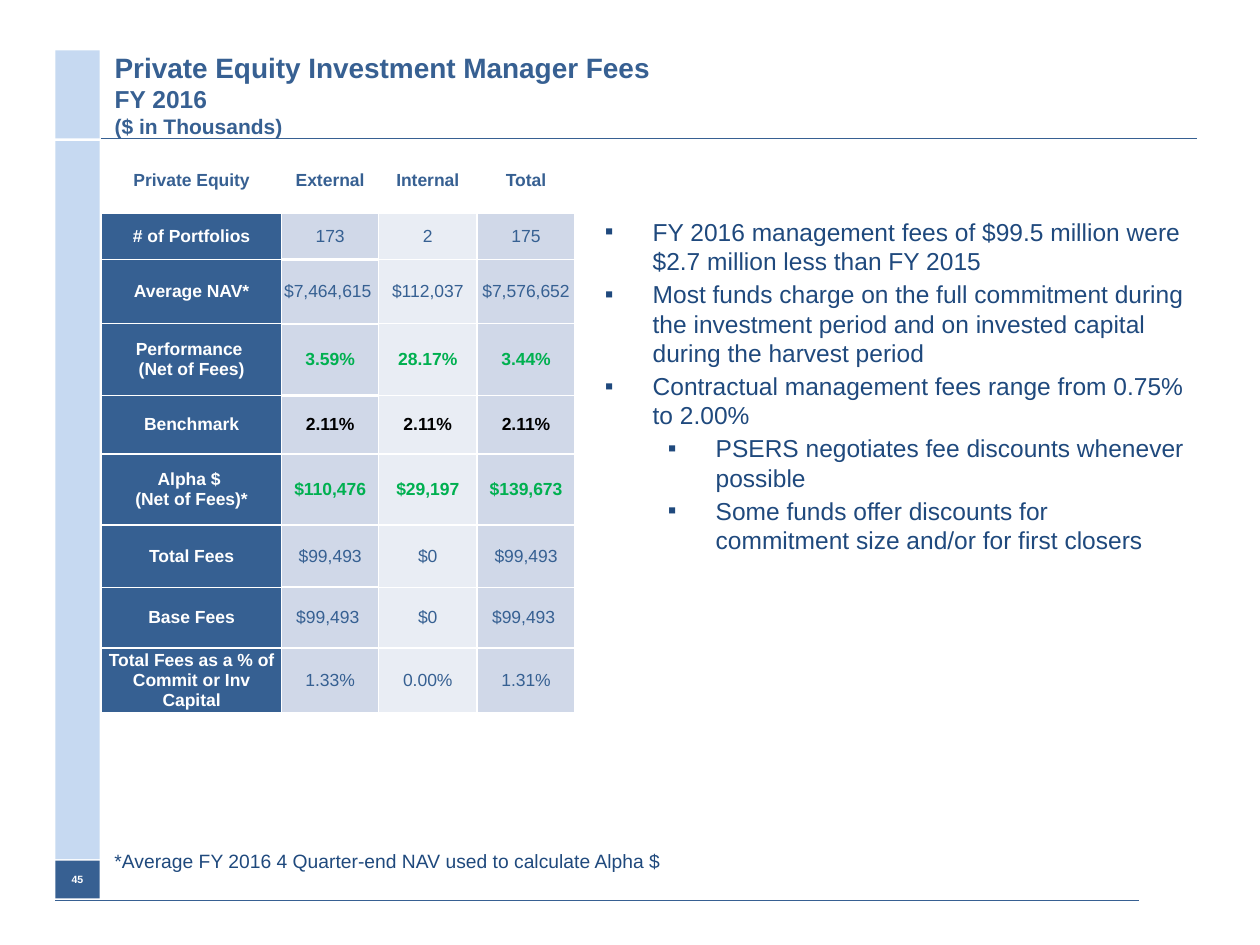
from lxml import etree
from pptx import Presentation
from pptx.dml.color import RGBColor
from pptx.enum.shapes import MSO_CONNECTOR, MSO_SHAPE
from pptx.enum.text import MSO_ANCHOR, MSO_AUTO_SIZE, PP_ALIGN
from pptx.oxml.ns import qn
from pptx.util import Inches, Pt

LEFT, CENTER = PP_ALIGN.LEFT, PP_ALIGN.CENTER
TOP, MIDDLE = MSO_ANCHOR.TOP, MSO_ANCHOR.MIDDLE
STRAIGHT, RECTANGLE = MSO_CONNECTOR.STRAIGHT, MSO_SHAPE.RECTANGLE
NO_AUTOFIT = MSO_AUTO_SIZE.NONE

SLIDE_WIDTH, SLIDE_HEIGHT = Inches(10), Inches(7.5)
FONT = "Arial"
BLUE, PALE_BLUE, NAVY, WHITE = "376092", "C6D9F1", "1F497D", "FFFFFF"
LABEL_FILL, GREEN, BLACK = "366092", "00B050", "000000"
VALUE_FILLS = ("D0D8E8", "E9EDF4", "D0D8E8")

# Shares of the slide's width and height, in percent
BAR_LEFT, BAR_WIDTH, CONTENT_LEFT = 4.4, 3.5, 8.1
TITLE_TOP, TITLE_HEIGHT, TITLE_RULE = 5.33, 9.33, 14.67
TABLE_LEFT, TABLE_TOP = 8.05, 15.6
COLUMN_WIDTHS = (14.3, 7.7, 7.8, 7.8)
ROW_HEIGHTS = (6.93, 4.93, 6.8, 7.6, 6.2, 7.5, 6.6, 6.4, 6.93)

TITLE_LINES = (("Private Equity Investment Manager Fees", 16),
               ("FY 2016", 14), ("($ in Thousands)", 12))
HEADINGS = ("Private Equity", "External", "Internal", "Total")
# Label, values, value colour, bold values
FEE_ROWS = (
    ("# of Portfolios", ("173", "2", "175"), LABEL_FILL, False),
    ("Average NAV*", ("$7,464,615 ", "$112,037", "$7,576,652"), LABEL_FILL, False),
    ("Performance \n(Net of Fees)", ("3.59%", "28.17%", "3.44%"), GREEN, True),
    ("Benchmark", ("2.11%", "2.11%", "2.11%"), BLACK, True),
    ("Alpha $ \n(Net of Fees)*", ("$110,476", "$29,197", "$139,673"), GREEN, True),
    ("Total Fees", ("$99,493", "$0", "$99,493"), LABEL_FILL, False),
    ("Base Fees", ("$99,493 ", "$0", "$99,493 "), LABEL_FILL, False),
    ("Total Fees as a % of Commit or Inv Capital", ("1.33%", "0.00%", "1.31%"),
     LABEL_FILL, False),
)
BULLETS = (
    (0, "FY 2016 management fees of $99.5 million were $2.7 million less than FY 2015"),
    (0, "Most funds charge on the full commitment during the investment period "
        "and on invested capital during the harvest period"),
    (0, "Contractual management fees range from 0.75% to 2.00%"),
    (1, "PSERS negotiates fee discounts whenever possible"),
    (1, "Some funds offer discounts for commitment size and/or for first closers"),
)


def color(hex_string):
    return RGBColor.from_string(hex_string)


def across(percent):
    return round(SLIDE_WIDTH * percent / 100)


def down(percent):
    return round(SLIDE_HEIGHT * percent / 100)


def box(left, top, width, height):
    return across(left), down(top), across(width), down(height)


def place(shape, left, top, width, height):
    shape.left, shape.top, shape.width, shape.height = box(left, top, width, height)


def add_run(paragraph, text, size, hex_color, bold=False):
    run = paragraph.add_run()
    run.text = text
    run.font.name, run.font.size, run.font.bold = FONT, Pt(size), bold
    run.font.color.rgb = color(hex_color)


def set_frame(frame, anchor):
    frame.word_wrap = True
    frame.auto_size = NO_AUTOFIT
    frame.vertical_anchor = anchor


def add_bar(slide, top, height, fill):
    bar = slide.shapes.add_shape(RECTANGLE, *box(BAR_LEFT, top, BAR_WIDTH, height))
    bar.shadow.inherit = False
    bar.fill.solid()
    bar.fill.fore_color.rgb = color(fill)
    bar.line.fill.background()
    return bar


def add_rule(slide, left, right, y, weight):
    rule = slide.shapes.add_connector(
        STRAIGHT, across(left), down(y), across(right), down(y))
    rule.line.color.rgb = color(BLUE)
    rule.line.width = Pt(weight)
    etree.SubElement(rule._element.spPr, qn("a:effectLst"))


def add_page_number(slide):
    badge = add_bar(slide, 91.07, 4, BLUE)
    set_frame(badge.text_frame, MIDDLE)
    paragraph = badge.text_frame.paragraphs[0]
    paragraph.alignment = CENTER
    add_run(paragraph, "45", 6, WHITE, True)


def fill_title(title):
    place(title, CONTENT_LEFT, TITLE_TOP, 86.9, TITLE_HEIGHT)
    set_frame(title.text_frame, MIDDLE)
    paragraph = title.text_frame.paragraphs[0]
    paragraph.alignment = LEFT
    for index, (text, size) in enumerate(TITLE_LINES):
        if index:
            paragraph.add_line_break()
        add_run(paragraph, text, size, BLUE, True)


def fill_bullets(body):
    place(body, 47, 22.27, 48.2, 40.93)
    frame = body.text_frame
    set_frame(frame, TOP)
    for index, (level, text) in enumerate(BULLETS):
        paragraph = frame.add_paragraph() if index else frame.paragraphs[0]
        paragraph.level = level
        properties = paragraph._p.get_or_add_pPr()
        properties.set("marL", str(Inches(0.38 + 0.5 * level)))
        properties.set("indent", str(Inches(-0.38)))
        etree.SubElement(properties, qn("a:buFont"), typeface=FONT)
        etree.SubElement(properties, qn("a:buChar"), char="▪")
        paragraph.space_before = Pt(2 if index else 0)
        add_run(paragraph, text, 14, NAVY)


def set_borders(cell, top_bottom_weight):
    properties = cell._tc.get_or_add_tcPr()
    for side in "LRTB":
        weight = top_bottom_weight if side in "TB" else 1
        line = etree.SubElement(properties, qn(f"a:ln{side}"), w=str(Pt(weight)))
        solid = etree.SubElement(line, qn("a:solidFill"))
        etree.SubElement(solid, qn("a:srgbClr"), val=WHITE)


def fill_cell(cell, text, hex_color, bold, fill=None, border_weight=1, side_margin=0):
    cell.margin_top = cell.margin_bottom = 0
    cell.margin_left = cell.margin_right = Inches(side_margin)
    cell.vertical_anchor = MIDDLE
    set_borders(cell, border_weight)
    if fill:
        cell.fill.solid()
        cell.fill.fore_color.rgb = color(fill)
    else:
        cell.fill.background()
    frame = cell.text_frame
    for index, line in enumerate(text.split("\n")):
        paragraph = frame.add_paragraph() if index else frame.paragraphs[0]
        paragraph.alignment = CENTER
        add_run(paragraph, line, 10, hex_color, bold)


def add_fee_table(slide):
    table = slide.shapes.add_table(
        len(ROW_HEIGHTS), len(COLUMN_WIDTHS),
        *box(TABLE_LEFT, TABLE_TOP, sum(COLUMN_WIDTHS), sum(ROW_HEIGHTS))).table
    table.first_row = table.horz_banding = False
    for column, width in zip(table.columns, COLUMN_WIDTHS):
        column.width = across(width)
    for row, height in zip(table.rows, ROW_HEIGHTS):
        row.height = down(height)
    border_weights = (1, 1.5, 1, 1)
    for column, heading in enumerate(HEADINGS):
        fill_cell(table.cell(0, column), heading, BLUE, True,
                  border_weight=border_weights[column])
    for row, (label, values, value_color, bold) in enumerate(FEE_ROWS, 1):
        fill_cell(table.cell(row, 0), label, WHITE, True, LABEL_FILL, side_margin=0.03)
        for column, value in enumerate(values, 1):
            fill_cell(table.cell(row, column), value, value_color, bold,
                      VALUE_FILLS[column - 1], border_weights[column])


def add_footnote(slide):
    footnote = slide.shapes.add_textbox(*box(CONTENT_LEFT, 88.4, 56.7, 5.33))
    set_frame(footnote.text_frame, MIDDLE)
    add_run(footnote.text_frame.paragraphs[0],
            "*Average FY 2016 4 Quarter-end NAV used to calculate Alpha $", 11, NAVY)


def main():
    presentation = Presentation()
    presentation.slide_width, presentation.slide_height = SLIDE_WIDTH, SLIDE_HEIGHT
    slide = presentation.slides.add_slide(presentation.slide_layouts[1])
    add_rule(slide, BAR_LEFT, 90.4, 95.33, 0.75)
    add_bar(slide, 14.93, 76, PALE_BLUE)
    add_bar(slide, TITLE_TOP, TITLE_HEIGHT, PALE_BLUE)
    add_rule(slide, 8, 95, TITLE_RULE, 1)
    add_page_number(slide)
    fill_title(slide.shapes.title)
    fill_bullets(slide.placeholders[1])
    add_footnote(slide)
    add_fee_table(slide)
    presentation.save("out.pptx")


if __name__ == "__main__":
    main()
